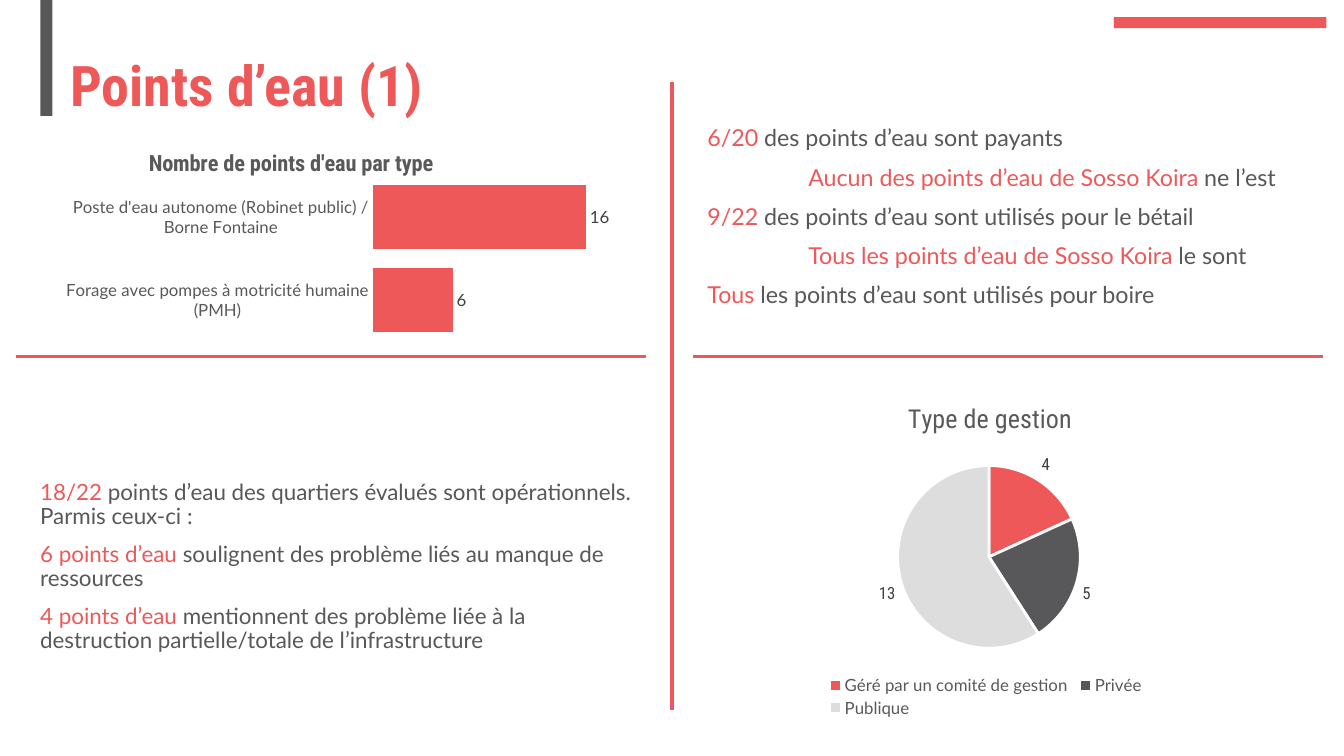
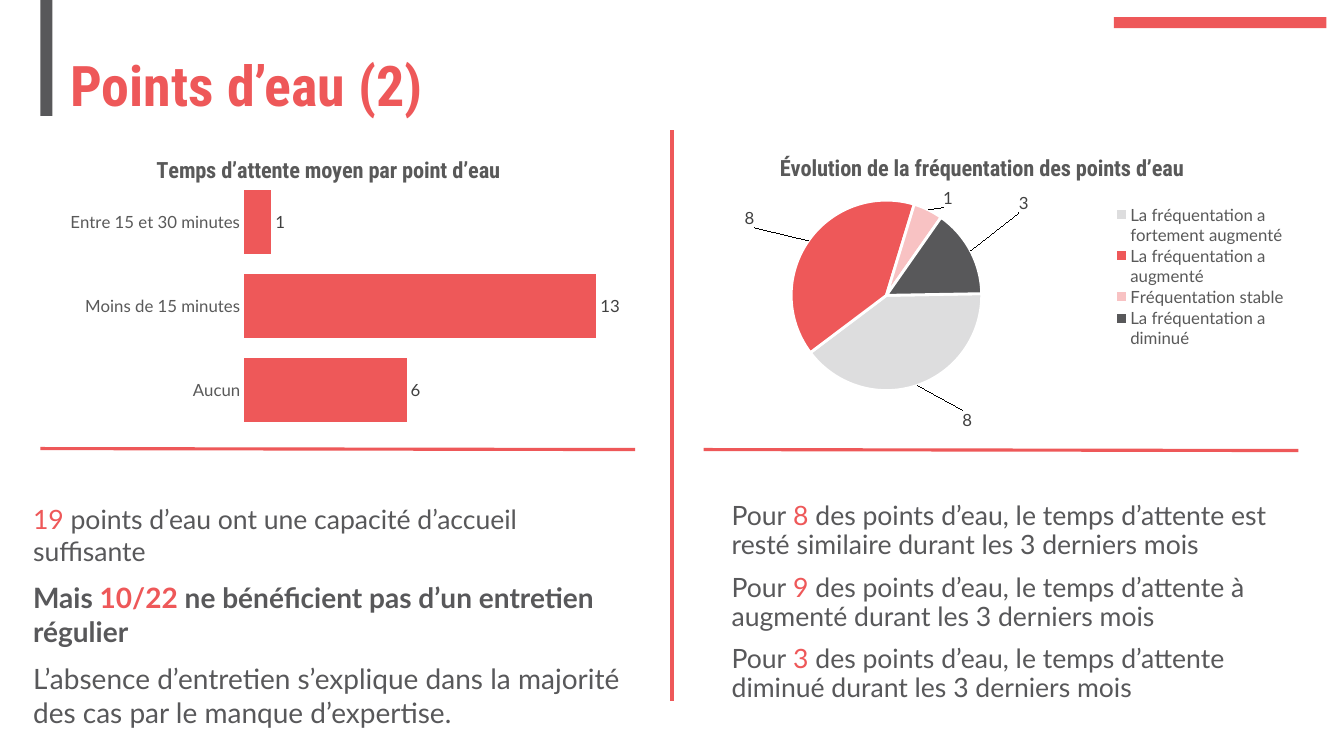
"""Two slides on water points: charts and key figures in four quadrants."""
from lxml import etree
from pptx import Presentation
from pptx.chart.data import CategoryChartData
from pptx.dml.color import RGBColor
from pptx.enum.chart import XL_CHART_TYPE as Kind, XL_LABEL_POSITION as LabelPos
from pptx.enum.chart import XL_LEGEND_POSITION as LegendPos, XL_TICK_MARK as Tick
from pptx.enum.shapes import MSO_CONNECTOR as Connector, MSO_SHAPE as Shape
from pptx.enum.text import MSO_ANCHOR as Anchor, PP_ALIGN as Align
from pptx.oxml.ns import qn
from pptx.util import Inches, Pt

RED = RGBColor(0xEE, 0x58, 0x59)
GREY = RGBColor(0x58, 0x58, 0x5A)
PALE = RGBColor(0xDD, 0xDD, 0xDE)
PINK = RGBColor(0xF8, 0xC2, 0xC3)
WHITE = RGBColor(0xFF, 0xFF, 0xFF)
CHART_TEXT = RGBColor(0x59, 0x59, 0x59)
LABEL_TEXT = RGBColor(0x40, 0x40, 0x40)
BODY, HEAD = "Lato", "Roboto Condensed"

deck = Presentation()
deck.slide_width, deck.slide_height = Inches(13.33), Inches(7.5)
COL, ROW = deck.slide_width / 40, deck.slide_height / 30


def grid(*box):
    """Turn alternating columns and rows into lengths."""
    return [round(value * unit) for value, unit in zip(box, (COL, ROW) * 2)]


def write(frame, text, size=16, font=BODY, bold=False, color=GREY, spacing=0.9,
          indent=0, align=Align.LEFT):
    """Add a paragraph in which the parts between bars are red."""
    first = not frame.text
    paragraph = frame.paragraphs[0] if first else frame.add_paragraph()
    paragraph.alignment, paragraph.line_spacing = align, spacing
    paragraph.space_before = Pt(0 if first else 10)
    if indent:
        paragraph._p.get_or_add_pPr().set("marL", str(Inches(indent)))
    for position, part in enumerate(text.split("|")):
        if part:
            run = paragraph.add_run()
            run.text = part
            run.font.name, run.font.size, run.font.bold = font, Pt(size), bold
            run.font.color.rgb = RED if position % 2 else color


pages = [
    dict(
        title="Points d’eau (1)",
        rules=[(20, 3.24, 20, 28.16), (20.64, 14.16, 39.39, 14.16),
               (0.48, 14.16, 19.23, 14.16)],
        charts=[
            dict(box=(1.59, 4.84, 16.98, 8.88), title="Nombre de points d'eau par type",
                 title_at=(0.16, 0.1), plot_at=(0.56, 0.24, 0.42, 0.74), top=18,
                 data={"Forage avec pompes à motricité humaine (PMH)": 6,
                       "Poste d'eau autonome (Robinet public) / Borne Fontaine": 16}),
            dict(box=(20.76, 14.92, 17.01, 13.68), title="Type de gestion",
                 title_size=18.6, title_bold=False, title_at=(0.36, 0.06),
                 plot_at=(0.35, 0.26, 0.32, 0.53), legend=LegendPos.BOTTOM,
                 legend_at=(0.22, 0.86, 0.57, 0.14), label_font=HEAD,
                 slices=[RED, GREY, PALE],
                 data={"Géré par un comité de gestion": 4, "Privée": 5, "Publique": 13}),
        ],
        texts=[
            ((20.76, 4.84, 19.05, 7.72), [
                ("|6/20 |des points d’eau sont payants", dict(size=16.6)),
                ("|Aucun des points d’eau de Sosso Koira |ne l’est",
                 dict(size=16.6, indent=1)),
                ("|9/22 |des points d’eau sont utilisés pour le bétail", dict(size=16.6)),
                ("|Tous les points d’eau de Sosso Koira |le sont",
                 dict(size=16.6, indent=1)),
                ("|Tous |les points d’eau sont utilisés pour boire", dict(size=16.6))]),
            ((0.9, 18.88, 18.36, 7.72), [
                ("|18/22 |points d’eau des quartiers évalués sont opérationnels. "
                 "Parmis ceux-ci :", {}),
                ("|6 points d’eau |soulignent des problème liés au manque de ressources", {}),
                ("|4 points d’eau |mentionnent des problème liée à la destruction "
                 "partielle/totale de l’infrastructure", {})]),
        ]),
    dict(
        title="Points d’eau (2)",
        rules=[(20, 5.16, 20, 27.8), (20.94, 17.84, 38.64, 17.88),
               (1.2, 17.8, 18.9, 17.84)],
        charts=[
            dict(box=(20.16, 4.92, 18.3, 12.6),
                 title="Évolution de la fréquentation des points d’eau",
                 title_at=(0.16, 0.08), plot_at=(0.18, 0.24, 0.32, 0.6),
                 legend=LegendPos.RIGHT, legend_at=(0.7, 0.25, 0.3, 0.46),
                 slices=[PALE, RED, PINK, GREY], start=89,
                 shifts=[(0.07, 0.06), (-0.08, -0.03), (0.02, 0.01), (0.07, -0.11)],
                 data={"La fréquentation a fortement augmenté": 8,
                       "La fréquentation a augmenté": 8,
                       "Fréquentation stable": 1, "La fréquentation a diminué": 3}),
            dict(box=(1.8, 5.04, 17.1, 12.36), title="Temps d’attente moyen par point d’eau",
                 title_at=(0.16, 0.08), plot_at=(0.32, 0.17, 0.66, 0.81), top=14,
                 data={"Aucun": 6, "Moins de 15 minutes": 13, "Entre 15 et 30 minutes": 1}),
        ],
        texts=[
            ((0.69, 19.76, 18.39, 8.64), [
                ("|19 |points d’eau ont une capacité d’accueil suffisante",
                 dict(size=19, spacing=1)),
                ("Mais| 10/22 |ne bénéficient pas d’un entretien régulier",
                 dict(size=20, bold=True, spacing=1)),
                ("L’absence d’entretien s’explique dans la majorité des cas par le "
                 "manque d’expertise.", dict(size=20, spacing=1))]),
            ((21.48, 19.76, 17.19, 8.64), [
                (f"Pour| {count} |des points d’eau, le temps d’attente {change} durant "
                 "les 3 derniers mois", dict(size=19))
                for count, change in ((8, "est resté similaire"), (9, "à augmenté"),
                                      (3, "diminué"))]),
        ]),
]

for page in pages:
    slide = deck.slides.add_slide(deck.slide_layouts[5])
    for box, color in (((33.15, 0.68, 6.33, 0.44), RED), ((1.2, 0, 0.36, 4.6), GREY)):
        band = slide.shapes.add_shape(Shape.RECTANGLE, *grid(*box))
        band.shadow.inherit = False
        band.fill.solid()
        band.fill.fore_color.rgb = color
        band.line.fill.background()

    heading = slide.shapes.title
    heading.left, heading.top, heading.width, heading.height = grid(1.8, 2.16, 14.61, 2.68)
    heading.text_frame.vertical_anchor = Anchor.MIDDLE
    write(heading.text_frame, page["title"], size=40, font=HEAD, bold=True, color=RED)

    for ends in page["rules"]:
        rule = slide.shapes.add_connector(Connector.STRAIGHT, *grid(*ends))
        rule.line.color.rgb, rule.line.width = RED, Pt(2.25)
        etree.SubElement(rule._element.spPr, qn("a:effectLst"))

    for item in page["charts"]:
        slices = item.get("slices")
        figures = CategoryChartData()
        figures.categories = list(item["data"])
        figures.add_series("Series 1", list(item["data"].values()))
        chart = slide.shapes.add_chart(Kind.PIE if slices else Kind.BAR_CLUSTERED,
                                       *grid(*item["box"]), figures).chart
        chart.font.name, chart.font.size = BODY, Pt(10)
        chart.has_title = True
        write(chart.chart_title.text_frame, item["title"], size=item.get("title_size", 16),
              font=HEAD, bold=item.get("title_bold", True), color=CHART_TEXT,
              align=Align.CENTER)
        plot = chart.plots[0]
        series = plot.series[0]
        labels = series.data_labels
        labels.show_value, labels.position = True, LabelPos.OUTSIDE_END
        fonts = [(labels.font, LABEL_TEXT)]
        layouts = [(chart.chart_title._element, 1, item["title_at"]),
                   (chart._chartSpace.chart.plotArea, 0, item["plot_at"])]
        chart.has_legend = bool(slices)

        if slices:
            plot.vary_by_categories = True
            legend = chart.legend
            legend.position, legend.include_in_layout = item["legend"], False
            fonts.append((legend.font, CHART_TEXT))
            layouts.append((legend._element, 1, item["legend_at"]))
            for index, color in enumerate(slices):
                wedge = series.points[index].format
                wedge.fill.solid()
                wedge.fill.fore_color.rgb = color
                wedge.line.color.rgb, wedge.line.width = WHITE, Pt(2)
            if "start" in item:
                plot._element.find(qn("c:firstSliceAng")) is None and etree.SubElement(
                    plot._element, qn("c:firstSliceAng"))
                plot._element.find(qn("c:firstSliceAng")).set("val", str(item["start"]))
            for index, shift in enumerate(item.get("shifts", [])):
                label = series.points[index].data_label
                label.position = LabelPos.OUTSIDE_END
                fonts.append((label.font, LABEL_TEXT))
                layouts.append((labels._element.findall(qn("c:dLbl"))[index], 1, shift))
            leaders = labels._element.find(qn("c:showLeaderLines"))
            if leaders is None:
                leaders = etree.SubElement(labels._element, qn("c:showLeaderLines"))
            leaders.set("val", "1")
        else:
            plot.vary_by_categories = False
            plot.gap_width, plot.overlap = 30, -25
            series.format.fill.solid()
            series.format.fill.fore_color.rgb = RED
            names, scale = chart.category_axis, chart.value_axis
            names.major_tick_mark = names.minor_tick_mark = Tick.NONE
            names.format.line.fill.background()
            names.has_major_gridlines = scale.has_major_gridlines = False
            fonts.append((names.tick_labels.font, CHART_TEXT))
            scale.minimum_scale, scale.maximum_scale = 0, item["top"]
            scale.visible = False

        for font, color in fonts:
            font.name, font.size, font.color.rgb = item.get("label_font", BODY), Pt(12), color
        if slices:
            chart.legend.font.name = BODY

        for part, index, shares in layouts:
            for old in part.findall(qn("c:layout")):
                part.remove(old)
            layout = etree.Element(qn("c:layout"))
            manual = etree.SubElement(layout, qn("c:manualLayout"))
            is_plot = part.tag == qn("c:plotArea")
            settings = [("layoutTarget", "inner")] if is_plot else []
            if part.tag != qn("c:dLbl"):
                settings += [("xMode", "edge"), ("yMode", "edge")]
            for name, value in settings + list(zip("xywh", shares)):
                etree.SubElement(manual, qn(f"c:{name}")).set("val", str(value))
            part.insert(index, layout)

    for box, lines in page["texts"]:
        frame = slide.shapes.add_textbox(*grid(*box)).text_frame
        frame.word_wrap = True
        for text, style in lines:
            write(frame, text, **style)

deck.save("out.pptx")
